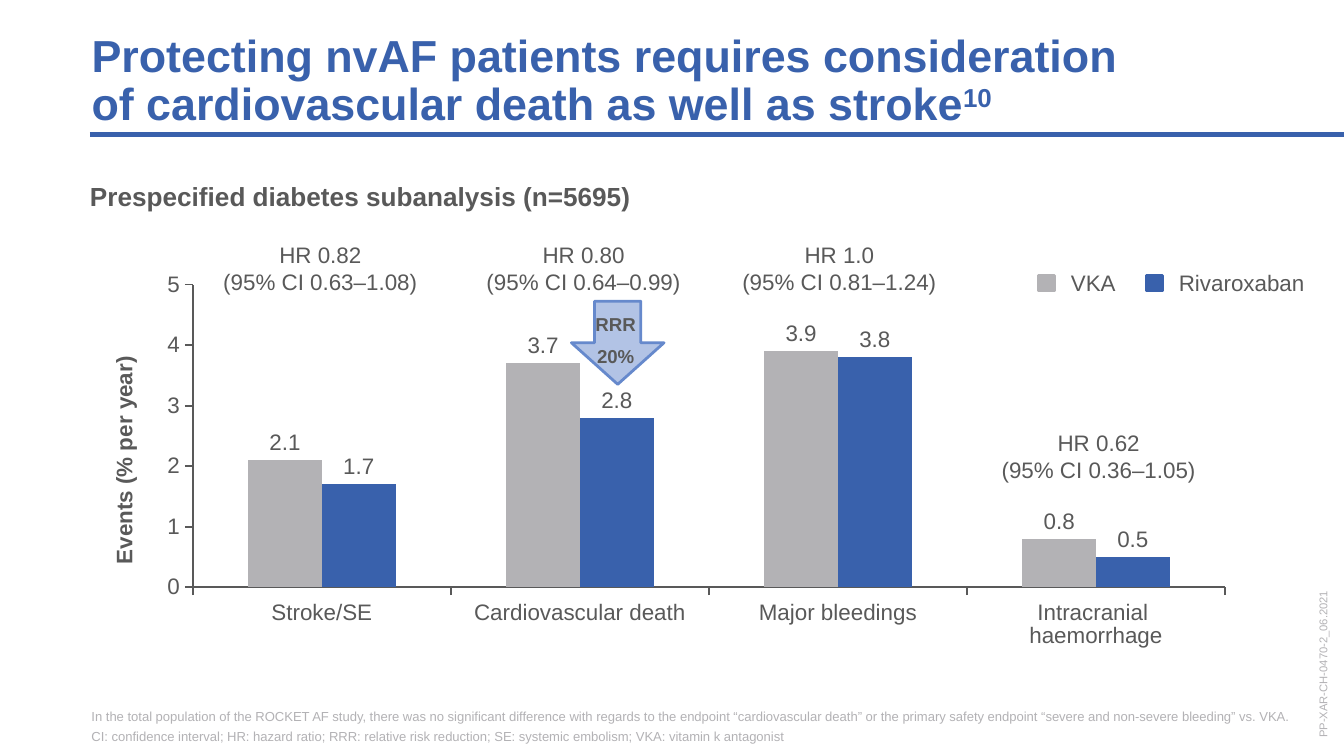
from lxml import etree
from pptx import Presentation
from pptx import util as u
from pptx.chart import data as chart_data
from pptx.dml.color import RGBColor
from pptx.enum import chart as charts, shapes, text
from pptx.oxml import parse_xml
from pptx.oxml.ns import nsdecls, qn

BLUE = RGBColor(0x39, 0x61, 0xAC)
LIGHT_BLUE = RGBColor(0x66, 0x89, 0xCC)
GREY = RGBColor(0xB3, 0xB2, 0xB5)
DARK = RGBColor(0x59, 0x59, 0x59)
FONT = "Arial"
CENTER = text.PP_ALIGN.CENTER
MIDDLE = text.MSO_ANCHOR.MIDDLE
BOTTOM = text.MSO_ANCHOR.BOTTOM


def style_font(font, size, color, bold=False):
    font.name = FONT
    font.size = u.Pt(size)
    font.bold = bold
    font.color.rgb = color


def place(box, left, top, width, height):
    box.left, box.top = u.Cm(left), u.Cm(top)
    box.width, box.height = u.Cm(width), u.Cm(height)


def set_frame(frame, anchor, inset=(0, 0), wrap=True):
    frame.auto_size = text.MSO_AUTO_SIZE.NONE
    frame.word_wrap = wrap
    frame.vertical_anchor = anchor
    frame.margin_left = frame.margin_right = u.Cm(inset[0])
    frame.margin_top = frame.margin_bottom = u.Cm(inset[1])


def add_text(parent, area, words, size, color=DARK, bold=False, align=None,
             anchor=MIDDLE, inset=(0, 0), wrap=True, gap=0):
    box = parent.shapes.add_textbox(*map(u.Cm, area))
    frame = box.text_frame
    set_frame(frame, anchor, inset, wrap)
    frame.text = words
    for index, paragraph in enumerate(frame.paragraphs):
        paragraph.alignment = align
        if index:
            paragraph.space_before = u.Pt(gap)
        for span in paragraph.runs:
            style_font(span.font, size, color, bold)
    return box


def add_block(parent, kind, area, fill, line):
    block = parent.shapes.add_shape(kind, *map(u.Cm, area))
    block.shadow.inherit = False
    block.fill.solid()
    block.fill.fore_color.rgb = fill
    block.line.color.rgb = line
    block.line.width = u.Pt(1.5)
    return block


def add_title(page):
    title = page.shapes.title
    place(title, 1.73, 0.61, 22.99, 1.85)
    frame = title.text_frame
    set_frame(frame, BOTTOM)
    frame.text = ("Protecting nvAF patients requires consideration \v"
                  "of cardiovascular death as well as stroke")
    paragraph = frame.paragraphs[0]
    paragraph.alignment = text.PP_ALIGN.LEFT
    paragraph.line_spacing = 0.9
    reference = paragraph.add_run()
    reference.text = "10"
    for span in paragraph.runs:
        style_font(span.font, 24, BLUE, True)
    reference.font._element.set("baseline", "30000")


def add_rule(page):
    rule = page.shapes.add_connector(
        shapes.MSO_CONNECTOR.STRAIGHT, u.Cm(1.7), u.Cm(2.54), u.Cm(25.4), u.Cm(2.54))
    rule.line.color.rgb = BLUE
    rule.line.width = u.Pt(2.25)
    etree.SubElement(rule._element.spPr, qn("a:effectLst"))


def style_axis(axis):
    axis.has_major_gridlines = False
    axis.major_tick_mark = charts.XL_TICK_MARK.OUTSIDE
    axis.minor_tick_mark = charts.XL_TICK_MARK.NONE
    axis.format.line.color.rgb = DARK
    axis.format.line.width = u.Pt(1)
    style_font(axis.tick_labels.font, 12, DARK)


def set_plot_area(chart, x, y, w, h):
    plot_area = chart._chartSpace.chart.plotArea
    for old in plot_area.findall(qn("c:layout")):
        plot_area.remove(old)
    plot_area.insert(0, parse_xml(
        f'<c:layout {nsdecls("c")}><c:manualLayout><c:layoutTarget val="inner"/>'
        '<c:xMode val="edge"/><c:yMode val="edge"/>'
        f'<c:x val="{x}"/><c:y val="{y}"/><c:w val="{w}"/><c:h val="{h}"/>'
        '</c:manualLayout></c:layout>'))


def add_events_chart(page):
    data = chart_data.CategoryChartData()
    data.categories = ["Stroke/SE", "Cardiovascular death", "Major bleedings",
                       "Intracranial \nhaemorrhage"]
    data.add_series("Series 1", (2.1, 3.7, 3.9, 0.8))
    data.add_series("Series 2", (1.7, 2.8, 3.8, 0.5))
    chart = page.shapes.add_chart(
        charts.XL_CHART_TYPE.COLUMN_CLUSTERED,
        u.Cm(1.27), u.Cm(4.01), u.Cm(22.63), u.Cm(8.64), data).chart
    chart.has_legend = False
    chart.has_title = False
    style_font(chart.font, 12, DARK)
    set_plot_area(chart, 0.105, 0.158, 0.862, 0.662)

    values = chart.value_axis
    style_axis(chart.category_axis)
    style_axis(values)
    values.minimum_scale, values.maximum_scale, values.major_unit = 0, 5, 1
    values.tick_labels.number_format = "0"
    values.tick_labels.number_format_is_linked = False
    values.axis_title.text_frame.text = "Events (% per year)"
    style_font(values.axis_title.text_frame.paragraphs[0].runs[0].font, 12, DARK, True)

    plot = chart.plots[0]
    plot.gap_width = 150
    plot.overlap = 0
    plot.vary_by_categories = False
    for series, color in zip(plot.series, (GREY, BLUE)):
        series.format.fill.solid()
        series.format.fill.fore_color.rgb = color
        labels = series.data_labels
        labels.show_value = True
        labels.number_format = "#,##0.0"
        labels.number_format_is_linked = False
        labels.position = charts.XL_LABEL_POSITION.OUTSIDE_END
        style_font(labels.font, 12, DARK)


def add_hazard_ratio(page, left, top, width, ratio, interval):
    add_text(page, (left, top, width, 1.22), f"HR {ratio}\v(95% CI {interval})", 12,
             align=CENTER, inset=(0.18, 0.1))


def add_legend(page):
    legend = page.shapes.add_group_shape()
    entries = (("VKA", GREY, 19.63, 1.37), ("Rivaroxaban", BLUE, 21.67, 2.9))
    for name, color, left, width in entries:
        add_block(legend, shapes.MSO_SHAPE.RECTANGLE, (left, 5.2, 0.3, 0.3), color, color)
        add_text(legend, (left + 0.36, 4.95, width, 0.79), name, 12,
                 inset=(0.25, 0.13), wrap=False)


def add_reduction_arrow(page):
    group = page.shapes.add_group_shape()
    arrow = add_block(group, shapes.MSO_SHAPE.DOWN_ARROW, (10.8, 5.69, 1.75, 1.57),
                      LIGHT_BLUE, LIGHT_BLUE)
    color = arrow.fill._xPr.find(qn("a:solidFill"))[0]
    etree.SubElement(color, qn("a:alpha")).set("val", "50000")
    add_text(group, (10.82, 5.77, 1.63, 1.32), "RRR\n20%", 10, bold=True,
             align=CENTER, inset=(0.25, 0.13), gap=5)


def main():
    deck = Presentation()
    deck.slide_width, deck.slide_height = u.Cm(25.4), u.Cm(14.28)
    page = deck.slides.add_slide(deck.slide_layouts[5])
    add_title(page)
    add_events_chart(page)
    add_rule(page)
    add_text(page, (1.73, 13.39, 22.99, 0.66),
             "In the total population of the ROCKET AF study, there was no significant "
             "difference with regards to the endpoint “cardiovascular death” or the primary "
             "safety endpoint “severe and non-severe bleeding” vs. VKA.\n"
             "CI: confidence interval; HR: hazard ratio; RRR: relative risk reduction; "
             "SE: systemic embolism; VKA: vitamin k antagonist",
             7, GREY, anchor=BOTTOM, gap=2)
    add_text(page, (1.7, 3.4, 23.01, 0.61), "Prespecified diabetes subanalysis (n=5695)",
             14, bold=True, anchor=text.MSO_ANCHOR.TOP)
    for ratio in ((3.91, 4.45, 4.29, "0.82", "0.63–1.08"),
                  (8.59, 4.45, 4.88, "0.80", "0.64–0.99"),
                  (13.77, 4.45, 4.19, "1.0", "0.81–1.24"),
                  (18.67, 8, 4.19, "0.62", "0.36–1.05")):
        add_hazard_ratio(page, *ratio)
    add_legend(page)
    add_reduction_arrow(page)
    code = add_text(page, (23.22, 11.76, 3.56, 0.79), "PP-XAR-CH-0470-2_06.2021", 6, GREY)
    code.rotation = 270
    deck.save("out.pptx")


if __name__ == "__main__":
    main()
